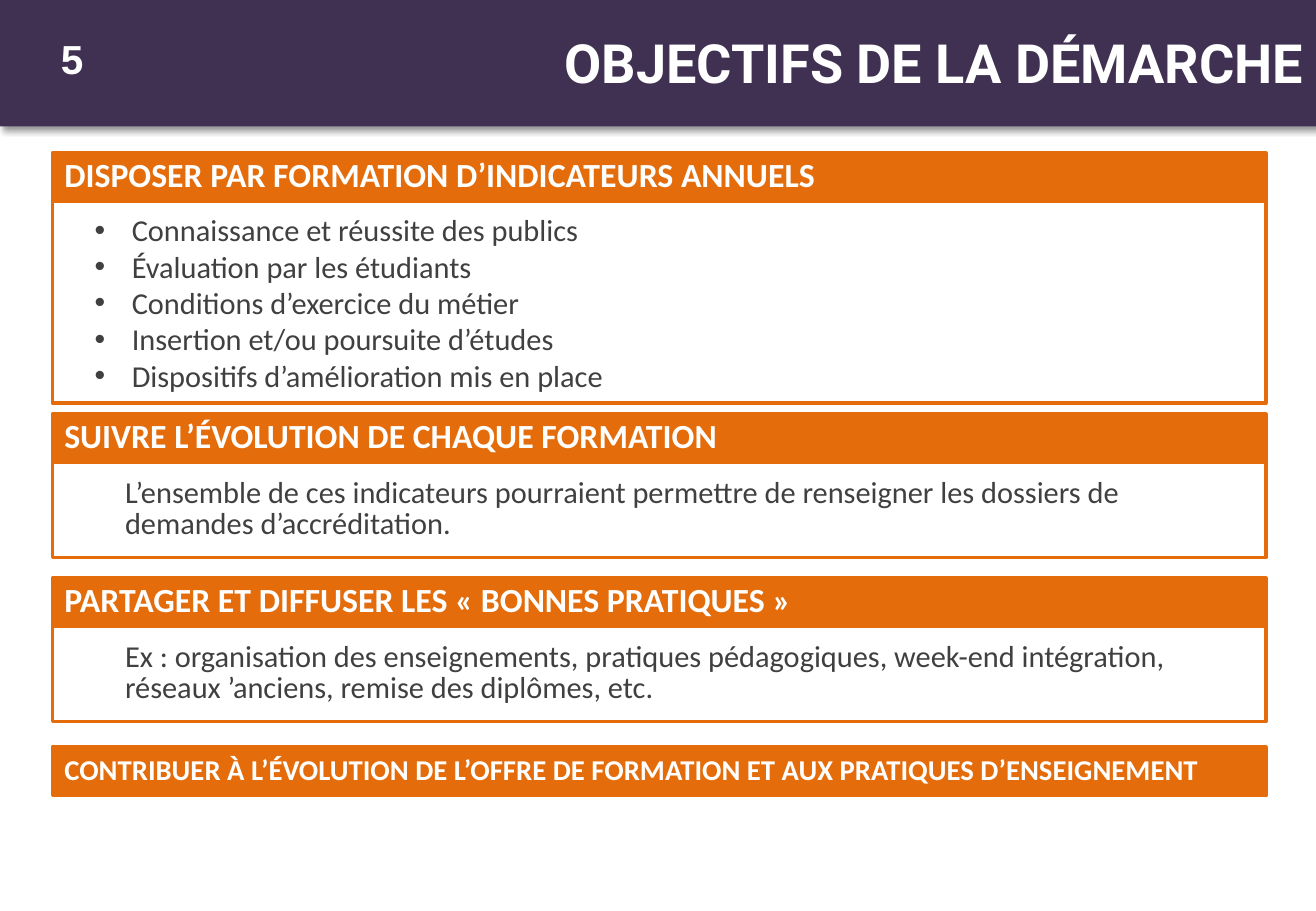
from lxml.etree import SubElement
from pptx import Presentation
from pptx.dml.color import RGBColor
from pptx.enum.shapes import MSO_SHAPE
from pptx.enum.text import MSO_ANCHOR, MSO_AUTO_SIZE, PP_ALIGN
from pptx.oxml.ns import qn
from pptx.util import Pt

COLORS = {
    "purple": "403152",
    "orange": "E46C0A",
    "white": "FFFFFF",
    "grey": "404040",
    "black": "000000",
}
SLIDE_WIDTH, SLIDE_HEIGHT = 780, 540
PANEL_LEFT, PANEL_WIDTH, HEADING_HEIGHT = 31, 719.3, 28.8

# top, heading, heading size, body height, body lines, bulleted
SECTIONS = [
    (90.7, "DISPOSER PAR FORMATION D’INDICATEURS ANNUELS", 20, 119.5, [
        "Connaissance et réussite des publics",
        "Évaluation par les étudiants",
        "Conditions d’exercice du métier",
        "Insertion et/ou poursuite d’études",
        "Dispositifs d’amélioration mis en place",
    ], True),
    (245.5, "SUIVRE L’ÉVOLUTION DE CHAQUE FORMATION", 20, 56.2, [
        "L’ensemble de ces indicateurs pourraient permettre de renseigner "
        "les dossiers de demandes d’accréditation.",
    ], False),
    (342.7, "PARTAGER ET DIFFUSER LES « BONNES PRATIQUES »", 20, 56.2, [
        "Ex : organisation des enseignements, pratiques pédagogiques, "
        "week-end intégration, réseaux ’anciens, remise des diplômes, etc.",
    ], False),
    (442.8, "CONTRIBUER À L’ÉVOLUTION DE L’OFFRE DE FORMATION "
            "ET AUX PRATIQUES D’ENSEIGNEMENT", 17, 0, [], False),
]


def rgb(name):
    return RGBColor.from_string(COLORS[name])


def write(paragraph, text, *, size, color="white", font="Calibri", bold=False,
          align=PP_ALIGN.LEFT, spacing=1.0, margin=0, hanging=0):
    """Fill a paragraph; a hanging indent gives it a bullet."""
    paragraph.alignment = align
    paragraph.line_spacing = spacing
    properties = paragraph._p.get_or_add_pPr()
    properties.set("marL", str(Pt(margin)))
    properties.set("indent", str(Pt(-hanging)))
    if hanging:
        SubElement(properties, qn("a:buFont"), typeface="Arial")
        SubElement(properties, qn("a:buChar"), char="•")
    span = paragraph.add_run()
    span.text = text
    span.font.size = Pt(size)
    span.font.name = font
    span.font.bold = bold
    span.font.color.rgb = rgb(color)


def add_soft_shadow(shape):
    effects = shape._element.spPr.find(qn("a:effectLst"))
    shadow = SubElement(effects, qn("a:outerShdw"), blurRad=str(Pt(4)),
                        dist=str(Pt(3)), dir=str(45 * 60000), rotWithShape="0")
    color = SubElement(shadow, qn("a:srgbClr"), val=COLORS["black"])
    SubElement(color, qn("a:alpha"), val="40000")


class SlidePainter:
    def __init__(self, page):
        self.page = page

    def box(self, left, top, width, height, fill, line=None):
        box = self.page.shapes.add_shape(
            MSO_SHAPE.RECTANGLE, Pt(left), Pt(top), Pt(width), Pt(height))
        box.shadow.inherit = False
        box.fill.solid()
        box.fill.fore_color.rgb = rgb(fill)
        if line:
            box.line.color.rgb = rgb(line)
            box.line.width = Pt(2)
        else:
            box.line.fill.background()
        box.text_frame.word_wrap = True
        box.text_frame.vertical_anchor = MSO_ANCHOR.MIDDLE
        return box

    def title(self, text):
        banner = self.box(0, -2, SLIDE_WIDTH, 77, "purple")
        add_soft_shadow(banner)
        write(banner.text_frame.paragraphs[0], text, size=32, font="Roboto",
              bold=True, align=PP_ALIGN.RIGHT)

    def heading(self, top, text, size):
        box = self.box(PANEL_LEFT, top, PANEL_WIDTH, HEADING_HEIGHT, "orange", "orange")
        write(box.text_frame.paragraphs[0], text, size=size, bold=True, spacing=0.85)

    def body(self, top, height, lines, bulleted):
        frame = self.box(PANEL_LEFT, top, PANEL_WIDTH, height, "white", "orange").text_frame
        if bulleted:
            layout = {"margin": 40, "hanging": 22}
        else:
            layout = {"margin": 36, "spacing": 0.85}
        for index, line in enumerate(lines):
            para = frame.add_paragraph() if index else frame.paragraphs[0]
            write(para, line, size=18, color="grey", **layout)

    def page_number(self, text):
        box = self.page.shapes.add_textbox(Pt(28.8), Pt(20.9), Pt(28), Pt(31.7))
        box.text_frame.word_wrap = False
        box.text_frame.auto_size = MSO_AUTO_SIZE.SHAPE_TO_FIT_TEXT
        write(box.text_frame.paragraphs[0], text, size=24, font="Arial",
              bold=True, align=PP_ALIGN.CENTER, spacing=0.85)


def main():
    deck = Presentation()
    deck.slide_width, deck.slide_height = Pt(SLIDE_WIDTH), Pt(SLIDE_HEIGHT)
    painter = SlidePainter(deck.slides.add_slide(deck.slide_layouts[6]))
    painter.title("OBJECTIFS DE LA DÉMARCHE")
    for top, heading, size, body_height, lines, bulleted in SECTIONS:
        if lines:
            painter.body(top + HEADING_HEIGHT, body_height, lines, bulleted)
        painter.heading(top, heading, size)
    painter.page_number("5")
    deck.save("out.pptx")


if __name__ == "__main__":
    main()
